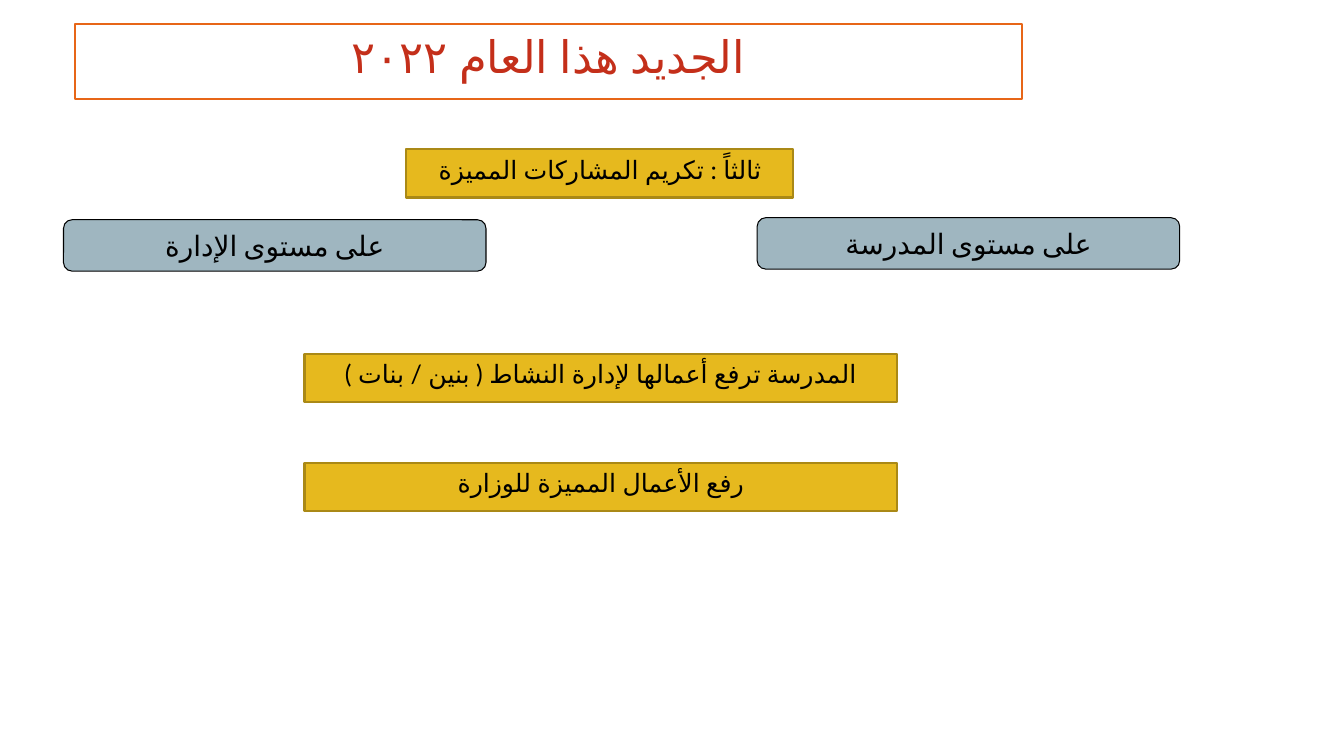
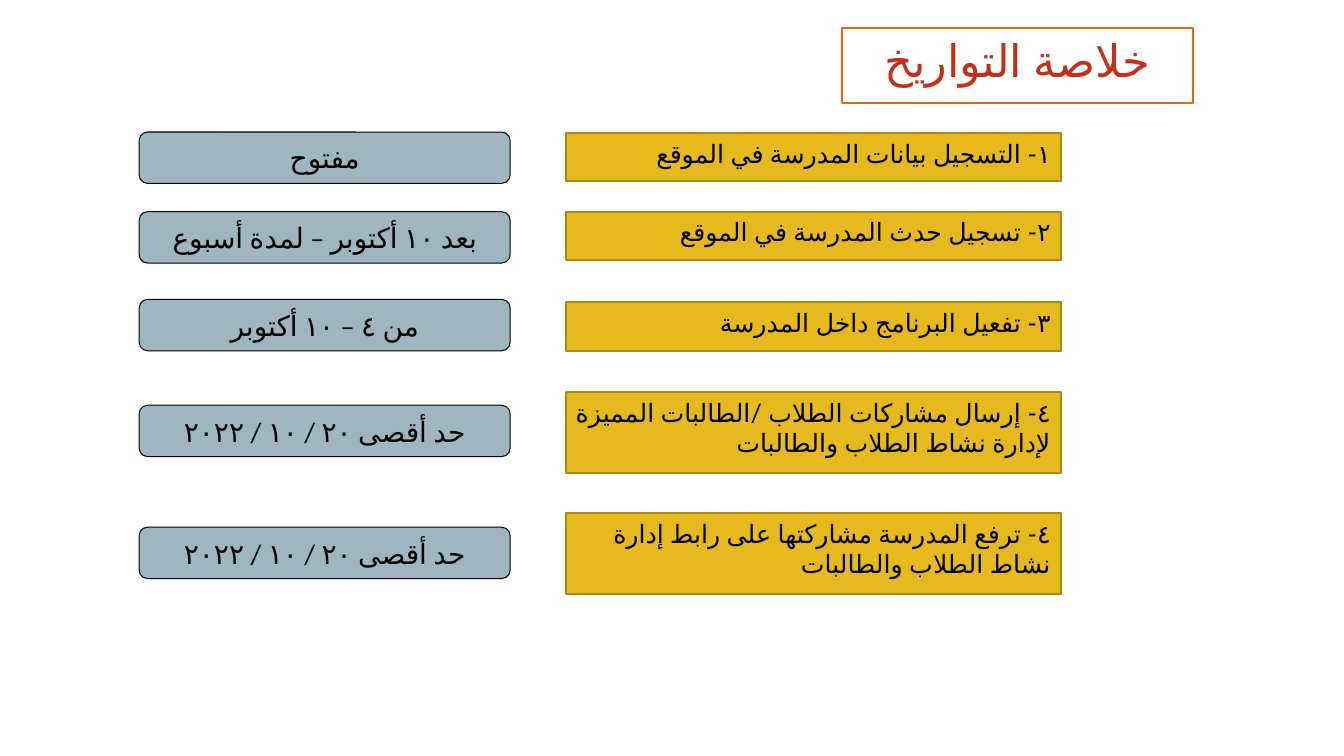
from dataclasses import dataclass

from lxml.etree import SubElement
from pptx import Presentation
from pptx.dml.color import RGBColor
from pptx.enum.lang import MSO_LANGUAGE_ID as Language
from pptx.enum.shapes import MSO_SHAPE as Preset
from pptx.enum.text import MSO_ANCHOR as Anchor, PP_ALIGN as Align
from pptx.oxml.ns import qn
from pptx.util import Inches, Pt


@dataclass(frozen=True)
class BoxStyle:
    """Look of one kind of text box."""

    preset: int
    fill: str
    line: str
    line_width: float
    font: str
    size: int
    color: str
    anchor: int = Anchor.TOP
    space_after: int = 0


@dataclass(frozen=True)
class Theme:
    """Colours, type sizes and heights shared by the slides."""

    title = BoxStyle(Preset.RECTANGLE, "FFFFFF", "E76618", 1.5, "Lato", 32, "C42F1A")
    gold = BoxStyle(Preset.RECTANGLE, "E6B91E", "AA8916", 1.5, "Lato", 18, "000000")
    pill = BoxStyle(Preset.ROUNDED_RECTANGLE, "9FB6C0", "000000", 0.75, "Calibri", 20,
                    "000000", Anchor.MIDDLE, 8)
    title_height = 0.74
    gold_height = 0.48
    gold_tall = 0.8
    pill_height = 0.51


THEME = Theme()


def add_box(slide, style, text, left, top, width, height, align=Align.CENTER):
    """Add a filled box holding one right-to-left paragraph."""
    shape = slide.shapes.add_shape(
        style.preset, Inches(left), Inches(top), Inches(width), Inches(height))
    shape.shadow.inherit = False
    shape.fill.solid()
    shape.fill.fore_color.rgb = RGBColor.from_string(style.fill)
    shape.line.color.rgb = RGBColor.from_string(style.line)
    shape.line.width = Pt(style.line_width)
    frame = shape.text_frame
    frame.word_wrap = True
    frame.vertical_anchor = style.anchor
    paragraph = frame.paragraphs[0]
    paragraph.text = text
    paragraph.alignment = align
    paragraph.space_after = Pt(style.space_after)
    properties = paragraph._p.get_or_add_pPr()
    properties.set("rtl", "1")
    font = paragraph.font
    font.size = Pt(style.size)
    font.color.rgb = RGBColor.from_string(style.color)
    font.name = style.font
    font.language_id = Language.ARABIC
    SubElement(properties.find(qn("a:defRPr")), qn("a:cs"), typeface=style.font)
    paragraph.runs[0].font.language_id = Language.ARABIC


def add_title(slide, text, left, top, width):
    """Add the outlined slide title."""
    add_box(slide, THEME.title, text, left, top, width, THEME.title_height)


def add_gold(slide, text, left, top, width, height=THEME.gold_height, align=Align.CENTER):
    """Add a gold statement bar."""
    add_box(slide, THEME.gold, text, left, top, width, height, align)


def add_pill(slide, text, left, top, width):
    """Add a rounded blue-grey label."""
    add_box(slide, THEME.pill, text, left, top, width, THEME.pill_height)


def build_honours_slide(slide):
    """Build the slide on honouring outstanding entries."""
    add_title(slide, "الجديد هذا العام ٢٠٢٢", 0.74, 0.24, 9.4)
    add_gold(slide, "ثالثاً : تكريم المشاركات المميزة", 4.03, 1.48, 3.84)
    add_pill(slide, "على مستوى المدرسة", 7.51, 2.16, 4.19)
    add_pill(slide, "على مستوى الإدارة", 0.63, 2.18, 4.19)
    steps = ("المدرسة ترفع أعمالها لإدارة النشاط ( بنين / بنات )",
             "رفع الأعمال المميزة للوزارة")
    for index, step in enumerate(steps):
        add_gold(slide, step, 3.02, 3.51 + 1.08 * index, 5.88)


def add_date_row(slide, task, date, left, task_top, date_top, task_height):
    """Add a task bar with its date label on the left."""
    date_width, gap, task_width = 3.68, 0.55, 4.91
    add_gold(slide, task, left + date_width + gap, task_top, task_width, task_height,
             Align.RIGHT)
    add_pill(slide, date, left, date_top, date_width)


def build_dates_slide(slide):
    """Build the summary of dates."""
    add_title(slide, "خلاصة التواريخ", 8.35, 0.28, 3.48)
    short, tall = THEME.gold_height, THEME.gold_tall
    deadline = "حد أقصى ٢٠ / ١٠ / ٢٠٢٢"
    rows = (
        ("١- التسجيل بيانات المدرسة في الموقع", "مفتوح", 1.32, 1.31, short),
        ("٢- تسجيل حدث المدرسة في الموقع", "بعد ١٠ أكتوبر – لمدة أسبوع", 2.1, 2.1, short),
        ("٣- تفعيل البرنامج داخل المدرسة", "من ٤ – ١٠ أكتوبر", 3, 2.97, short),
        ("٤- إرسال مشاركات الطلاب /الطالبات المميزة لإدارة نشاط الطلاب والطالبات",
         deadline, 3.89, 4.02, tall),
        ("٤- ترفع المدرسة مشاركتها على رابط إدارة نشاط الطلاب والطالبات",
         deadline, 5.09, 5.23, tall),
    )
    for task, date, task_top, date_top, task_height in rows:
        add_date_row(slide, task, date, 1.38, task_top, date_top, task_height)


def main():
    """Build and save the presentation."""
    presentation = Presentation()
    presentation.slide_width = Inches(13.33)
    presentation.slide_height = Inches(7.5)
    blank = presentation.slide_layouts[6]
    for build in (build_honours_slide, build_dates_slide):
        build(presentation.slides.add_slide(blank))
    presentation.save("out.pptx")


if __name__ == "__main__":
    main()
